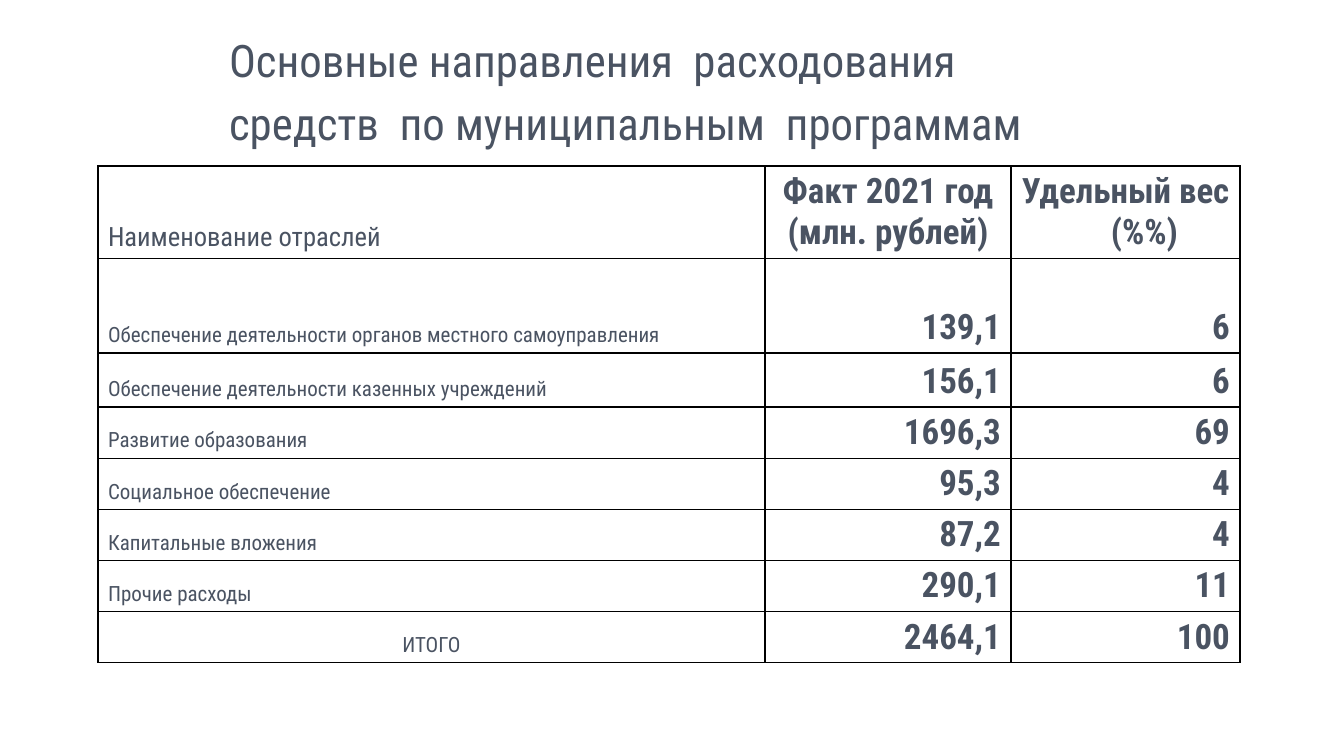
from collections import namedtuple
from dataclasses import dataclass

from lxml.etree import SubElement
from pptx import Presentation
from pptx.dml.color import RGBColor
from pptx.enum.text import MSO_ANCHOR as Anchor, MSO_AUTO_SIZE as AutoSize, PP_ALIGN as Align
from pptx.oxml.ns import qn
from pptx.util import Pt

PX = 914400 / 100.8
Box = namedtuple("Box", "left top width height")


@dataclass(frozen=True)
class Theme:
    """Colours, typeface and type sizes of the slide."""
    font: str = "Roboto Condensed"
    ink: str = "4A5362"
    grid: str = "000000"
    title: int = 32
    title_end: int = 44
    heading: int = 19
    figure: int = 25
    label: int = 15


THEME = Theme()
HEADINGS = ("Наименование отраслей", "Факт 2021 год\n(млн. рублей)", "Удельный вес (%%)")
SPENDING = (
    ("Обеспечение деятельности органов местного самоуправления", "139,1", "6"),
    ("Обеспечение деятельности казенных учреждений", "156,1", "6"),
    ("Развитие образования", "1696,3", "69"),
    ("Социальное обеспечение", "95,3", "4"),
    ("Капитальные вложения", "87,2", "4"),
    ("Прочие расходы", "290,1", "11"),
    ("ИТОГО", "2464,1", "100"),
)
COLUMN_WIDTHS = (667, 246, 229)
ROW_HEIGHTS = (92, 95, 54) + (51,) * 5
HANGING = 38


def px(length):
    """Turn px into EMU."""
    return round(length * PX)


def write(paragraph, text, size, bold=False, align=Align.LEFT, hanging=0, spacing=None):
    """Add a formatted run to a paragraph and lay the paragraph out."""
    paragraph.alignment = align
    if spacing:
        paragraph.line_spacing = spacing
    if hanging:
        layout = paragraph._p.get_or_add_pPr()
        layout.set("marL", str(px(hanging)))
        layout.set("indent", str(-px(hanging)))
    run = paragraph.add_run()
    run.text = text
    run.font.name, run.font.size, run.font.bold = THEME.font, Pt(size), bold
    run.font.color.rgb = RGBColor.from_string(THEME.ink)


def outline(cell):
    """Clear the fill of a cell and rule its four sides."""
    properties = cell._tc.get_or_add_tcPr()
    for side in ("a:lnL", "a:lnR", "a:lnT", "a:lnB"):
        border = SubElement(properties, qn(side), w=str(Pt(1)))
        SubElement(SubElement(border, qn("a:solidFill")), qn("a:srgbClr"), val=THEME.grid)
    cell.fill.background()


def add_heading(slide, box):
    """Place the slide title in the box."""
    title = slide.shapes.title
    title.left, title.top, title.width, title.height = map(px, box)
    frame = title.text_frame
    frame.word_wrap, frame.auto_size = True, AutoSize.NONE
    frame.vertical_anchor = Anchor.MIDDLE
    heading = frame.paragraphs[0]
    write(heading, "Основные направления  расходования  средств  по муниципальным  программам",
          THEME.title, spacing=0.9)
    write(heading, " ", THEME.title_end)


def cell_format(row, column):
    """Give the text format for a place in the spending table."""
    if column == 0:
        total = row == len(SPENDING)
        return dict(size=THEME.label if row else THEME.heading,
                    align=Align.CENTER if total else Align.LEFT)
    return dict(size=THEME.figure, bold=True, align=Align.RIGHT if row else Align.CENTER)


def add_spending(slide, box):
    """Draw the table of spending by sector in the box."""
    rows = (HEADINGS,) + SPENDING
    table = slide.shapes.add_table(len(rows), len(HEADINGS), *map(px, box)).table
    table.first_row = table.horz_banding = False
    for column, width in zip(table.columns, COLUMN_WIDTHS):
        column.width = px(width)
    for row, height in zip(table.rows, ROW_HEIGHTS):
        row.height = px(height)
    for r, entries in enumerate(rows):
        for c, entry in enumerate(entries):
            cell = table.cell(r, c)
            cell.vertical_anchor = Anchor.BOTTOM
            outline(cell)
            frame = cell.text_frame
            for i, line in enumerate(entry.split("\n")):
                paragraph = frame.add_paragraph() if i else frame.paragraphs[0]
                write(paragraph, line, hanging=HANGING, **cell_format(r, c))


def main():
    """Build and save the slide."""
    deck = Presentation()
    deck.slide_width, deck.slide_height = px(1344), px(756)
    slide = deck.slides.add_slide(deck.slide_layouts[5])
    add_heading(slide, Box(219, 21, 907, 151))
    add_spending(slide, Box(98, 166, sum(COLUMN_WIDTHS), sum(ROW_HEIGHTS)))
    deck.save("out.pptx")


if __name__ == "__main__":
    main()
